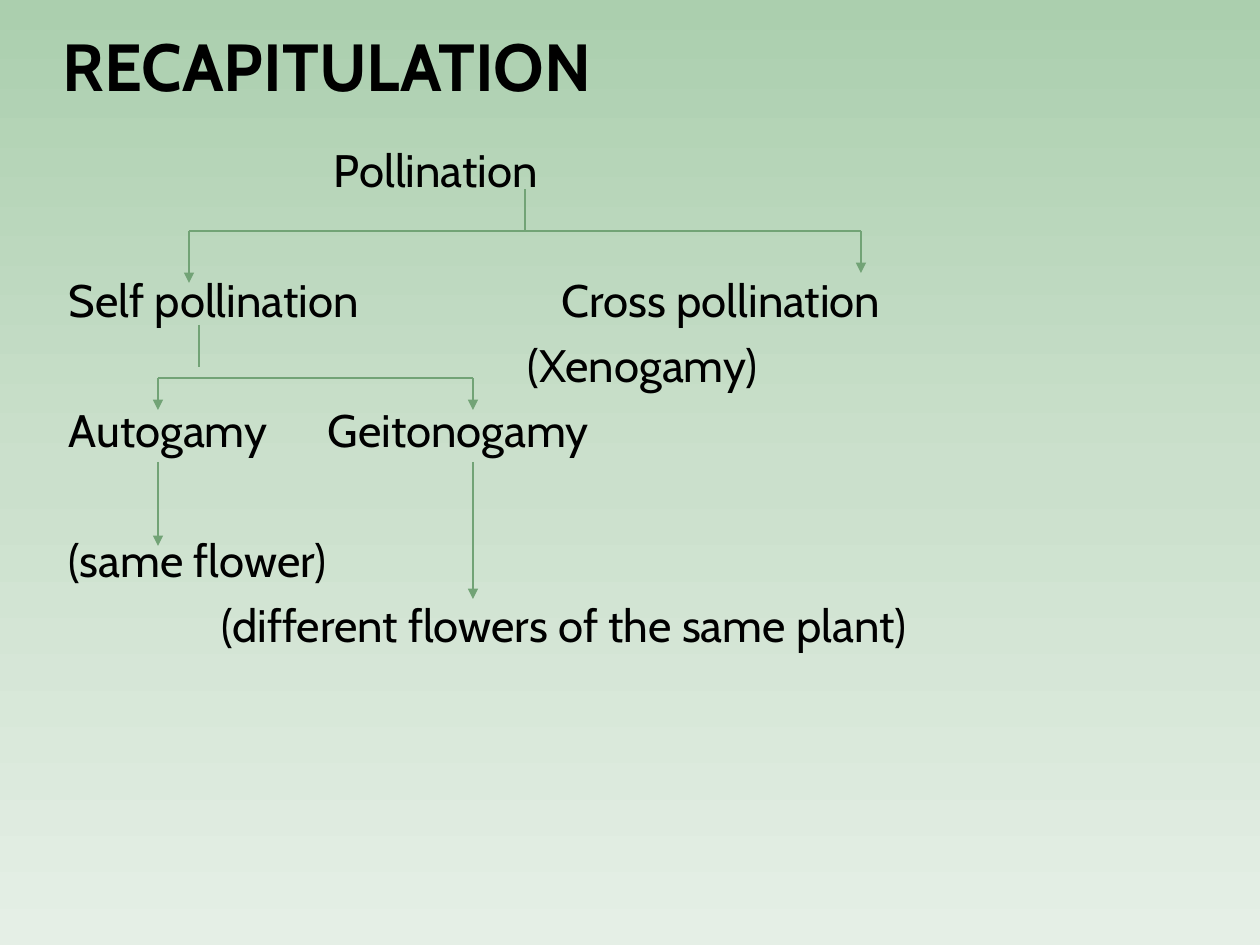
from dataclasses import dataclass

from copy import deepcopy
from lxml.etree import SubElement
from pptx import Presentation
from pptx.dml.color import RGBColor as Rgb
from pptx.enum.shapes import MSO_CONNECTOR as Connector
from pptx.enum.text import MSO_ANCHOR as Anchor
from pptx.oxml.ns import qn
from pptx.util import Emu, Pt


@dataclass(frozen=True)
class Theme:
    """Colours, font and type sizes of the slide."""
    font: str = "Cabin"
    ink: str = "000000"
    arrow: str = "72A376"
    backdrop: tuple = ((0, "ABCFAE"), (0.5, "CBE0CC"), (1, "E5EFE6"))
    title_size: int = 38
    body_size: int = 26
    line_width: float = 0.9
    row_gap: int = 6
    skipped_row_gap: int = 43


THEME = Theme()


def px(length):
    """Turn px into EMU at 126 px to the inch."""
    return Emu(round(length * 914400 / 126))


def paint_background(slide):
    """Fill the slide with the vertical green gradient."""
    fill = slide.background.fill
    fill.gradient()
    fill.gradient_angle = 270
    stop_list = slide._element.find(".//" + qn("a:gsLst"))
    stop_list.append(deepcopy(stop_list[-1]))
    for stop, (position, colour) in zip(fill.gradient_stops, THEME.backdrop):
        stop.position = position
        stop.color.rgb = Rgb.from_string(colour)


def add_frame(slide, box, inset):
    """Add a wrapping text box and return its text frame."""
    frame = slide.shapes.add_textbox(*map(px, box)).text_frame
    frame.word_wrap = True
    frame.margin_left = frame.margin_right = px(inset)
    frame.margin_top = frame.margin_bottom = px(inset)
    return frame


def style(paragraph, size, bold=False):
    """Set the font of a paragraph."""
    font = paragraph.font
    font.name, font.size, font.bold = THEME.font, Pt(size), bold
    font.color.rgb = Rgb.from_string(THEME.ink)


def add_title(slide, box, wording):
    """Place the heading at the foot of its box."""
    frame = add_frame(slide, box, 0)
    frame.vertical_anchor = Anchor.BOTTOM
    heading = frame.paragraphs[0]
    heading.text = wording
    style(heading, THEME.title_size, bold=True)


def add_terms(slide, box, rows):
    """Write the terms, each row with its indent, tab stop and space before."""
    frame = add_frame(slide, box, 6)
    for number, (wording, indent, tab, gap) in enumerate(rows):
        term = frame.add_paragraph() if number else frame.paragraphs[0]
        term.text = wording
        properties = term._p.get_or_add_pPr()
        properties.set("marL", str(px(indent)))
        if tab:
            tabs = SubElement(properties, qn("a:tabLst"))
            SubElement(tabs, qn("a:tab"), pos=str(px(tab)), algn="l")
        term.space_before = Pt(gap)
        style(term, THEME.body_size)


def add_line(slide, start, end, arrow=False):
    """Draw a thin green line, with an arrowhead at its end if asked."""
    link = slide.shapes.add_connector(
        Connector.STRAIGHT, *map(px, (*start, *end)))
    link.line.color.rgb = Rgb.from_string(THEME.arrow)
    link.line.width = Pt(THEME.line_width)
    if arrow:
        SubElement(link.line._get_or_add_ln(), qn("a:tailEnd"), type="triangle")
    SubElement(link._element.spPr, qn("a:effectLst"))


def add_branch(slide, box, stem_x, stem_length, bar_y, right_drop):
    """Draw a stem, a bar and an arrow down from each end of the bar."""
    left, top, width, height = box
    right, bar = left + width, top + bar_y
    add_line(slide, (left + stem_x, top), (left + stem_x, top + stem_length))
    add_line(slide, (left, bar), (right, bar))
    add_line(slide, (left, bar), (left, top + height), arrow=True)
    add_line(slide, (right, bar), (right, bar + right_drop), arrow=True)


def add_meanings(slide, box, drops):
    """Draw an arrow down from each side of the box to a meaning."""
    left, top, width, _ = box
    for x, drop in zip((left, left + width), drops):
        add_line(slide, (x, top), (x, top + drop), arrow=True)


def main():
    """Build and save the slide."""
    deck = Presentation()
    deck.slide_width, deck.slide_height = px(1260), px(945)
    slide = deck.slides.add_slide(deck.slide_layouts[6])
    near, far = THEME.row_gap, THEME.skipped_row_gap
    paint_background(slide)
    add_title(slide, (63, 0, 998, 105), "RECAPITULATION")
    add_terms(slide, (63, 136, 998, 784), (
        ("Pollination", 265, None, 0),
        ("Self pollination\tCross pollination", 0, 493, far),
        ("(Xenogamy)", 459, None, near),
        ("Autogamy\tGeitonogamy", 0, 259, near),
        ("(same flower)", 0, None, far),
        ("(different flowers of the same plant)", 153, None, near),
    ))
    add_branch(slide, (189, 189, 672, 94), 336, 42, 42, 42)
    add_branch(slide, (158, 325, 315, 85), 41, 42, 53, 32)
    add_meanings(slide, (158, 462, 315, 137), (84, 137))
    deck.save("out.pptx")


if __name__ == "__main__":
    main()
